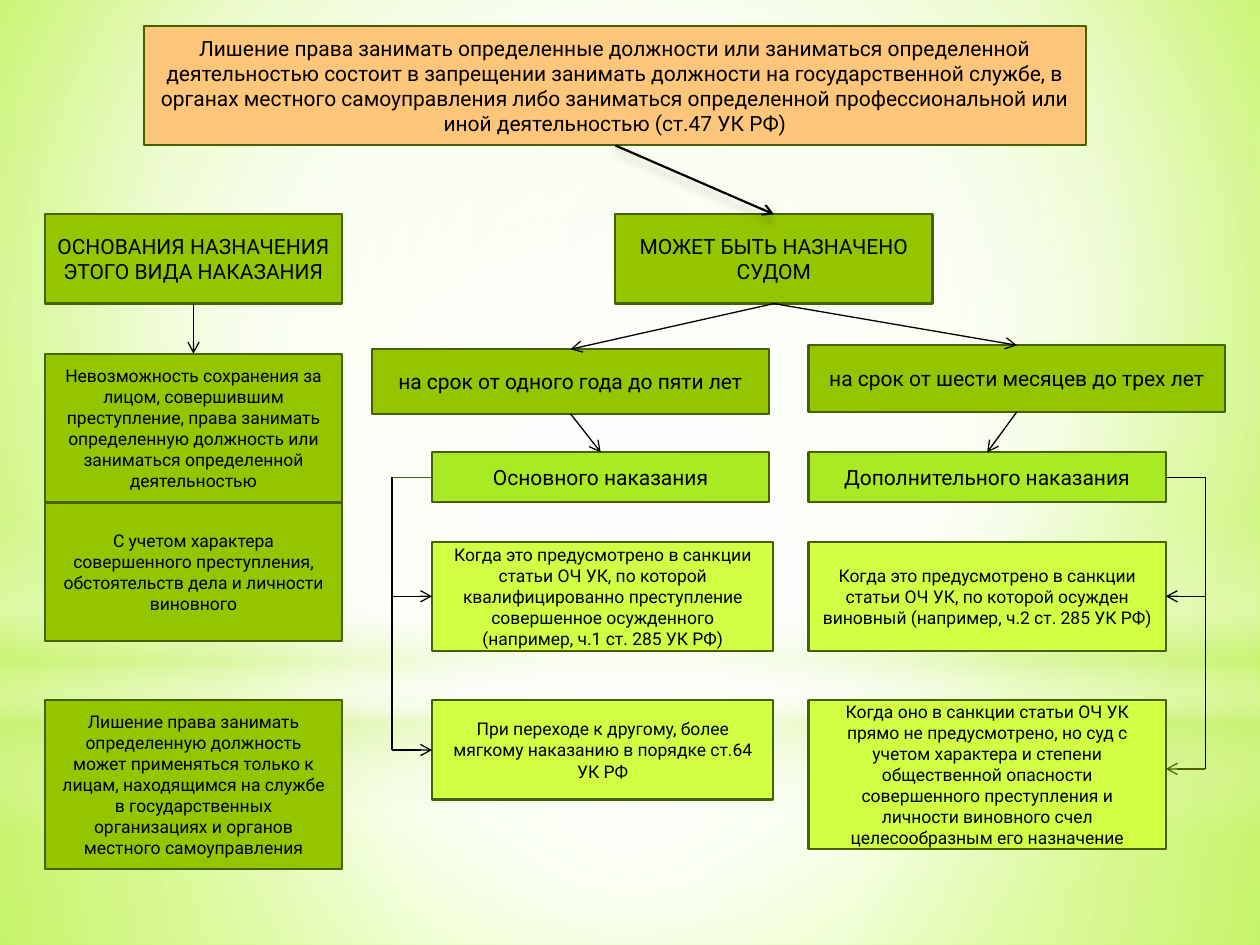
from lxml.etree import SubElement
from pptx import Presentation
from pptx.dml.color import RGBColor
from pptx.enum.shapes import MSO_CONNECTOR, MSO_SHAPE
from pptx.enum.text import MSO_ANCHOR, PP_ALIGN
from pptx.oxml import parse_xml
from pptx.oxml.ns import nsdecls, qn
from pptx.util import Cm, Pt

FONT = "Roboto"
BLACK = RGBColor(0x00, 0x00, 0x00)
BORDER = RGBColor(0x48, 0x61, 0x00)
OLIVE = RGBColor(0x4A, 0x63, 0x00)
ORANGE = RGBColor(0xFE, 0xC6, 0x7A)
GREEN = RGBColor(0x94, 0xC6, 0x00)
LIME = RGBColor(0xAA, 0xEA, 0x25)
PALE = RGBColor(0xD0, 0xFF, 0x44)

W, H = 25.4, 19.05
BACKDROP = [(0, "EAFAC9", 100), (60, "F7FFE7", 100), (100, "B7FF29", 100)]
CENTRE = (50, 50, 50, 50)
GLOWS = [
    (MSO_SHAPE.RECTANGLE, 14.17, 4.88, CENTRE,
     [(0, "FFFFFF", 91), (37, "FFFFFF", 76), (100, "CAF278", 79)]),
    (MSO_SHAPE.RECTANGLE, 0, 14.17, CENTRE,
     [(0, "FFFFFF", 89), (48, "FFFFFF", 62), (100, "CAF278", 79)]),
    (MSO_SHAPE.RECTANGLE, 10.46, 6.35, None,
     [(0, "FFFFFF", 0), (29, "FFFFFF", 30), (45, "CAF278", 40),
      (55, "FFFFFF", 26), (65, "CAF278", 60), (100, "FFFFFF", 0)]),
    (MSO_SHAPE.OVAL, 4.45, 14.17, CENTRE, [(0, "FFFFFF", 100), (56, "FFFFFF", 0)]),
]

LEFT, MIDDLE, RIGHT = 0.9, 8.71, 16.3
ROW_HEAD, ROW_KIND, ROW_CASE, ROW_LAST = 4.32, 9.12, 10.92, 14.12
BOXES = {
    "definition": (2.9, 0.53, 19, 2.4, ORANGE, 12,
        "Лишение права занимать определенные должности или заниматься определенной "
        "деятельностью состоит в запрещении занимать должности на государственной службе, "
        "в органах местного самоуправления либо заниматься определенной профессиональной "
        "или иной деятельностью (ст.47 УК РФ)"),
    "grounds": (LEFT, ROW_HEAD, 6, 1.8, GREEN, 12,
        "ОСНОВАНИЯ НАЗНАЧЕНИЯ ЭТОГО ВИДА НАКАЗАНИЯ"),
    "impossible": (LEFT, 7.13, 6, 3, GREEN, 10,
        "Невозможность сохранения за лицом, совершившим преступление, права занимать "
        "определенную должность или заниматься определенной деятельностью"),
    "character": (LEFT, 10.13, 6, 2.8, GREEN, 10,
        "С учетом характера совершенного преступления, обстоятельств дела и личности "
        "виновного"),
    "limits": (LEFT, ROW_LAST, 6, 3.4, GREEN, 10,
        "Лишение права занимать определенную должность может применяться только к лицам, "
        "находящимся на службе в государственных организациях и органов местного "
        "самоуправления"),
    "court": (12.4, ROW_HEAD, 6.4, 1.8, GREEN, 12, "МОЖЕТ БЫТЬ НАЗНАЧЕНО СУДОМ"),
    "months": (RIGHT, 6.96, 8.4, 1.34, GREEN, 12, "на срок от шести месяцев до трех лет"),
    "years": (7.5, 7.04, 8, 1.3, GREEN, 12, "на срок от одного года до пяти лет"),
    "main": (MIDDLE, ROW_KIND, 6.8, 1, LIME, 12, "Основного наказания"),
    "extra": (RIGHT, ROW_KIND, 7.2, 1, LIME, 12, "Дополнительного наказания"),
    "main_sanction": (MIDDLE, ROW_CASE, 6.88, 2.2, PALE, 10,
        "Когда это предусмотрено в санкции статьи ОЧ УК, по которой квалифицированно "
        "преступление совершенное осужденного (например, ч.1 ст. 285 УК РФ)"),
    "main_milder": (MIDDLE, ROW_LAST, 6.88, 2, PALE, 10,
        "При переходе к другому, более мягкому наказанию в порядке ст.64 УК РФ"),
    "extra_sanction": (RIGHT, ROW_CASE, 7.2, 2.2, PALE, 10,
        "Когда это предусмотрено в санкции статьи ОЧ УК, по которой осужден виновный "
        "(например, ч.2 ст. 285 УК РФ)"),
    "extra_court": (RIGHT, ROW_LAST, 7.2, 3, PALE, 10,
        "Когда оно в санкции статьи ОЧ УК прямо не предусмотрено, но суд с учетом "
        "характера и степени общественной опасности совершенного преступления и личности "
        "виновного счел целесообразным его назначение"),
}
FLOWS = [("grounds", "impossible"), ("definition", "court"), ("court", "years"),
         ("court", "months"), ("years", "main"), ("months", "extra")]
STUB_Y, CASE_Y = 9.62, 12.02
RAILS = [
    (7.9, MIDDLE, 15.12, OLIVE, BLACK),
    (24.3, RIGHT + 7.2, 15.5, BLACK, OLIVE),
]


def set_gradient(fill, parent, stops, focus):
    fill.solid()
    gs = "".join(
        f'<a:gs pos="{pos * 1000}"><a:srgbClr val="{color}">'
        f'<a:alpha val="{alpha * 1000}"/></a:srgbClr></a:gs>'
        for pos, color, alpha in stops)
    if focus:
        l, t, r, b = (v * 1000 for v in focus)
        shade = (f'<a:path path="circle"><a:fillToRect l="{l}" t="{t}" r="{r}" b="{b}"/>'
                 '</a:path>')
    else:
        shade = '<a:lin ang="5400000" scaled="0"/>'
    grad = parse_xml(f'<a:gradFill {nsdecls("a")} rotWithShape="1">'
                     f'<a:gsLst>{gs}</a:gsLst>{shade}</a:gradFill>')
    parent.replace(parent.find(qn("a:solidFill")), grad)


def add_glow(slide, kind, top, height, focus, stops):
    sp = slide.shapes.add_shape(kind, 0, Cm(top), Cm(W), Cm(height))
    set_gradient(sp.fill, sp._element.spPr, stops, focus)
    sp.line.fill.background()
    sp.shadow.inherit = False


def add_box(slide, x, y, w, h, color, size, text):
    sp = slide.shapes.add_shape(MSO_SHAPE.RECTANGLE, Cm(x), Cm(y), Cm(w), Cm(h))
    sp.shadow.inherit = False
    sp.fill.solid()
    sp.fill.fore_color.rgb = color
    sp.line.color.rgb = BORDER
    sp.line.width = Pt(1.25)
    tf = sp.text_frame
    tf.word_wrap = True
    tf.vertical_anchor = MSO_ANCHOR.MIDDLE
    tf.text = text
    p = tf.paragraphs[0]
    p.alignment = PP_ALIGN.CENTER
    font = p.runs[0].font
    font.name, font.size, font.color.rgb = FONT, Pt(size), BLACK
    return sp


def add_line(slide, start=(0, 0), end=(0, 0), color=BLACK, arrow=True, width=0.75):
    ln = slide.shapes.add_connector(
        MSO_CONNECTOR.STRAIGHT, *(Cm(v) for v in (*start, *end)))
    ln.line.color.rgb = color
    ln.line.width = Pt(width)
    if arrow:
        SubElement(ln.line._ln, qn("a:tailEnd"), type="arrow")
    SubElement(ln._element.spPr, qn("a:effectLst"))
    return ln


def add_soft_shadow(ln):
    effects = ln._element.spPr.find(qn("a:effectLst"))
    shadow = SubElement(effects, qn("a:outerShdw"), blurRad=str(Pt(5)), dist=str(Pt(4)),
                        dir="5400000", rotWithShape="0")
    color = SubElement(shadow, qn("a:srgbClr"), val="000000")
    SubElement(color, qn("a:alpha"), val="20000")


def main():
    prs = Presentation()
    prs.slide_width, prs.slide_height = Cm(W), Cm(H)
    slide = prs.slides.add_slide(prs.slide_layouts[6])
    fill = slide.background.fill
    fill.solid()
    bg = slide._element.find(".//" + qn("p:bgPr"))
    set_gradient(fill, bg, BACKDROP, (20, 10, 20, 60))
    for kind, top, height, focus, stops in GLOWS:
        add_glow(slide, kind, top, height, focus, stops)

    boxes = {name: add_box(slide, *box) for name, box in BOXES.items()}
    for source, target in FLOWS:
        from_definition = source == "definition"
        ln = add_line(slide, width=1.25 if from_definition else 0.75)
        ln.begin_connect(boxes[source], 2)
        ln.end_connect(boxes[target], 0)
        if from_definition:
            add_soft_shadow(ln)

    for rail, edge, bottom, stub_color, last_color in RAILS:
        add_line(slide, (edge, STUB_Y), (rail, STUB_Y), stub_color, arrow=False)
        add_line(slide, (rail, STUB_Y), (rail, bottom), arrow=False)
        add_line(slide, (rail, CASE_Y), (edge, CASE_Y))
        add_line(slide, (rail, bottom), (edge, bottom), last_color)
    prs.save("out.pptx")


if __name__ == "__main__":
    main()
